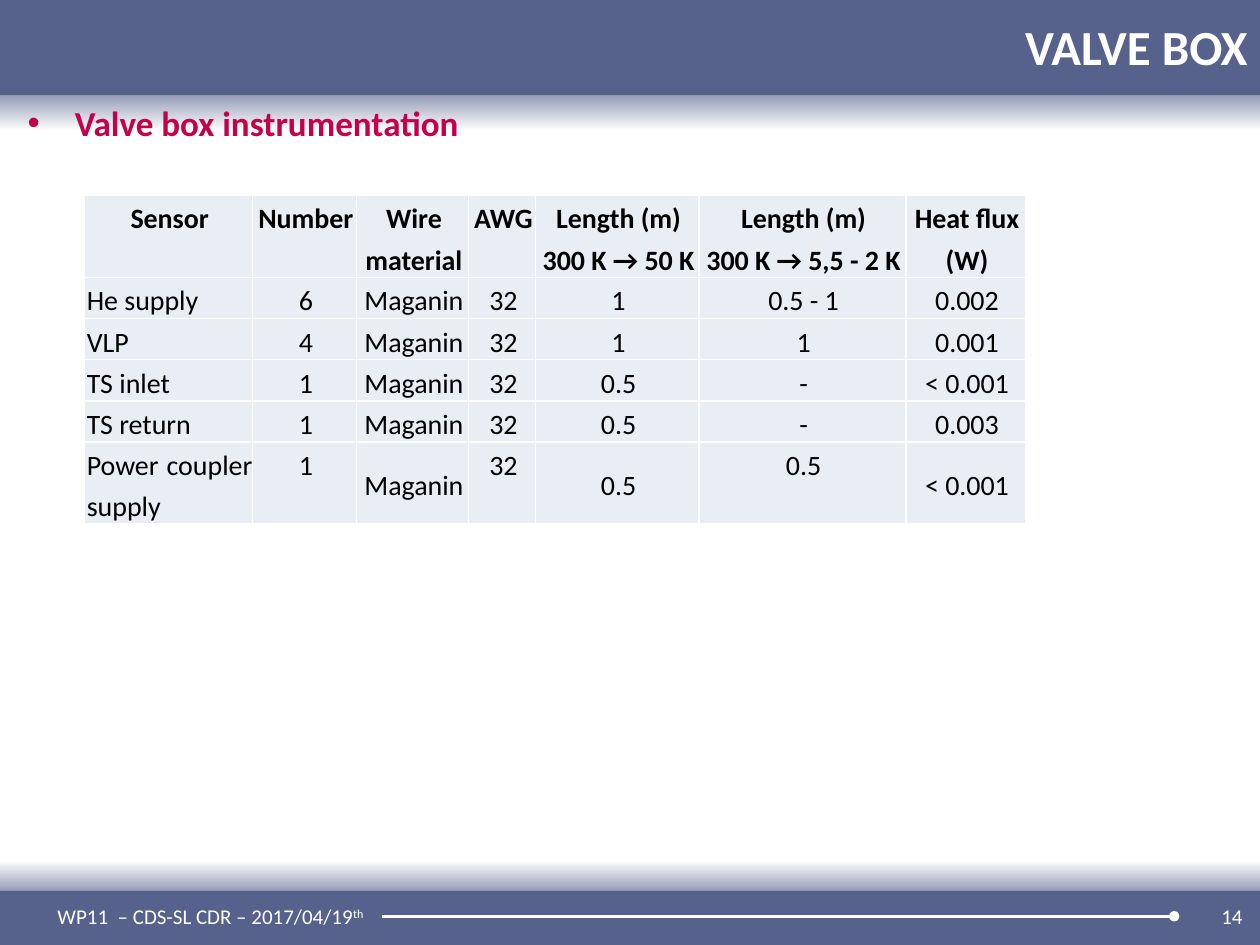
import pptx
import pptx.dml.color
import pptx.enum.shapes
import pptx.enum.text
import pptx.oxml
import pptx.oxml.ns
import pptx.util
from pptx.util import Cm

RGBColor = pptx.dml.color.RGBColor
ALIGN = pptx.enum.text.PP_ALIGN
ANCHOR = pptx.enum.text.MSO_ANCHOR

SLATE = RGBColor(0x56, 0x62, 0x8C)
HAZE = RGBColor(0x96, 0x9D, 0xB8)
WHITE = RGBColor(0xFF, 0xFF, 0xFF)
BLACK = RGBColor(0x00, 0x00, 0x00)
CRIMSON = RGBColor(0xC3, 0x00, 0x4A)
CELL = RGBColor(0xE9, 0xED, 0xF4)

WIDTH, HEIGHT = 25.4, 19.05
HEADER_HEIGHT = 1.93
FOOTER_TOP, FOOTER_HEIGHT = 17.96, 1.09

COLUMN_WIDTHS = [3.39, 2.1, 2.26, 1.35, 3.29, 4.17, 2.42]
ROW_HEIGHTS = [1.65, 0.83, 0.83, 0.83, 0.83, 1.65]
MIDDLE_COLUMNS = (0, 2, 4, 6)
SENSORS = [
    ["Sensor", "Number", "Wire material", "AWG", "Length (m)\n300 K → 50 K",
     "Length (m)\n300 K → 5,5 - 2 K", "Heat flux\n(W)"],
    ["He supply", "6", "Maganin", "32", "1", "0.5 - 1", "0.002"],
    ["VLP", "4", "Maganin", "32", "1", "1", "0.001"],
    ["TS inlet", "1", "Maganin", "32", "0.5", "-", "< 0.001"],
    ["TS return", "1", "Maganin", "32", "0.5", "-", "0.003"],
    ["Power coupler supply", "1", "Maganin", "32", "0.5", "0.5", "< 0.001"],
]


def add_xml(parent, tag, content="", **attributes):
    """Append a drawing element to the parent."""
    listed = "".join(f' {name}="{value}"' for name, value in attributes.items())
    namespace = pptx.oxml.ns.nsdecls("a")
    parent.append(pptx.oxml.parse_xml(
        f"<a:{tag} {namespace}{listed}>{content}</a:{tag}>"))


class SlideBuilder:
    font_name = "Calibri"

    def __init__(self, slide):
        self.slide = slide

    def style(self, font, size, color, bold=False):
        font.name = self.font_name
        font.size = pptx.util.Pt(size)
        font.color.rgb = color
        font.bold = bold

    def rectangle(self, top, height):
        shape = self.slide.shapes.add_shape(
            pptx.enum.shapes.MSO_SHAPE.RECTANGLE,
            Cm(0), Cm(top), Cm(WIDTH), Cm(height))
        shape.shadow.inherit = False
        shape.line.fill.background()
        return shape

    def band(self, top, height):
        fill = self.rectangle(top, height).fill
        fill.solid()
        fill.fore_color.rgb = SLATE

    def fade(self, top, height, upper, lower):
        fill = self.rectangle(top, height).fill
        fill.gradient()
        fill.gradient_angle = 270
        for stop, color in zip(fill.gradient_stops, (upper, lower)):
            stop.color.rgb = color

    def rule(self, left, right, top):
        """Draw a horizontal line that ends in a dot."""
        line = self.slide.shapes.add_connector(
            pptx.enum.shapes.MSO_CONNECTOR.STRAIGHT,
            Cm(left), Cm(top), Cm(right), Cm(top))
        line.line.color.rgb = WHITE
        line.line.width = pptx.util.Pt(1.5)
        add_xml(line.line._get_or_add_ln(), "tailEnd", type="oval")
        add_xml(line._element.spPr, "effectLst")

    def text(self, place, text, size, color=WHITE, bold=False,
             align=ALIGN.LEFT, anchor=ANCHOR.MIDDLE):
        box = self.slide.shapes.add_textbox(*map(Cm, place))
        frame = box.text_frame
        frame.word_wrap = True
        frame.vertical_anchor = anchor
        frame.text = text
        paragraph = frame.paragraphs[0]
        paragraph.alignment = align
        self.style(paragraph.runs[0].font, size, color, bold)
        return frame

    def bullet(self, place, text):
        frame = self.text(place, text, 20, CRIMSON, True, anchor=ANCHOR.TOP)
        frame.margin_left = frame.margin_right = frame.margin_bottom = Cm(0.05)
        properties = frame.paragraphs[0]._p.get_or_add_pPr()
        properties.set("marL", str(Cm(0.95)))
        properties.set("indent", str(Cm(-0.95)))
        add_xml(properties, "buFont", typeface="Arial")
        add_xml(properties, "buChar", char="•")

    def table(self, left, top, rows):
        table = self.slide.shapes.add_table(
            len(rows), len(COLUMN_WIDTHS), Cm(left), Cm(top),
            Cm(sum(COLUMN_WIDTHS)), Cm(sum(ROW_HEIGHTS))).table
        table.first_row = table.horz_banding = False
        for column, width in zip(table.columns, COLUMN_WIDTHS):
            column.width = Cm(width)
        for row, height in zip(table.rows, ROW_HEIGHTS):
            row.height = Cm(height)
        for row_index, row in enumerate(rows):
            for column_index, text in enumerate(row):
                header = row_index == 0
                middle = not header and column_index in MIDDLE_COLUMNS
                justified = not header and column_index == 0
                self.cell(table.cell(row_index, column_index), text, header,
                          ANCHOR.MIDDLE if middle else ANCHOR.TOP,
                          ALIGN.JUSTIFY if justified else ALIGN.CENTER)

    def cell(self, cell, text, bold, anchor, align):
        cell.margin_left = cell.margin_right = Cm(0)
        cell.margin_top = cell.margin_bottom = Cm(0)
        cell.vertical_anchor = anchor
        cell.text_frame.text = text
        for paragraph in cell.text_frame.paragraphs:
            paragraph.alignment = align
            paragraph.line_spacing = 1.2
            paragraph._p.get_or_add_pPr().set("marL", str(Cm(0.05)))
            self.style(paragraph.runs[0].font, 16, BLACK, bold)
        properties = cell._tc.get_or_add_tcPr()
        for side in ("lnL", "lnR", "lnT", "lnB"):
            add_xml(properties, side,
                    f'<a:solidFill><a:srgbClr val="{WHITE}"/></a:solidFill>',
                    w=pptx.util.Pt(1))
        cell.fill.solid()
        cell.fill.fore_color.rgb = CELL


def main():
    presentation = pptx.Presentation()
    presentation.slide_width = Cm(WIDTH)
    presentation.slide_height = Cm(HEIGHT)
    builder = SlideBuilder(
        presentation.slides.add_slide(presentation.slide_layouts[6]))

    builder.fade(HEADER_HEIGHT, 0.71, HAZE, WHITE)
    builder.fade(FOOTER_TOP - 0.61, 0.61, WHITE, HAZE)
    builder.band(0, HEADER_HEIGHT)
    builder.band(FOOTER_TOP, FOOTER_HEIGHT)
    builder.rule(7.7, 23.67, 18.47)

    footer = builder.text((0.91, FOOTER_TOP, 8.97, 1.02),
                          "WP11  – CDS-SL CDR – 2017/04/19", 12)
    ordinal = footer.paragraphs[0].add_run()
    ordinal.text = "th"
    builder.style(ordinal.font, 12, WHITE)
    ordinal._r.get_or_add_rPr().set("baseline", "30000")
    builder.text((19.38, FOOTER_TOP, 5.92, 1.02), "14", 12, align=ALIGN.RIGHT)

    builder.text((2.69, -0.08, 22.71, 2.01), "VALVE BOX", 28, bold=True,
                 align=ALIGN.RIGHT)
    builder.bullet((0.51, HEADER_HEIGHT, 24.89, 16.05),
                   "Valve box instrumentation")
    builder.table(1.7, 3.94, SENSORS)
    presentation.save("out.pptx")


if __name__ == "__main__":
    main()
